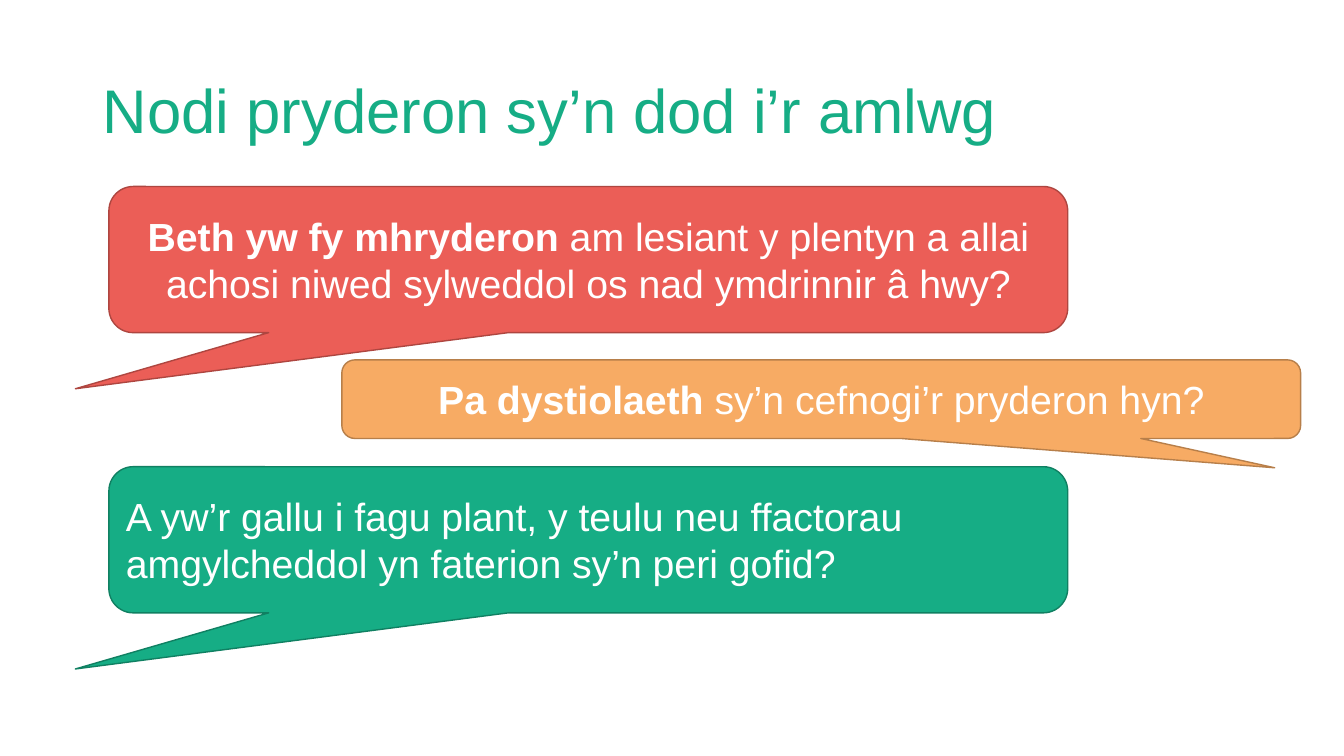
import pptx
import pptx.dml.color
import pptx.enum.shapes
import pptx.enum.text
import pptx.util

Inches = pptx.util.Inches
ALIGN = pptx.enum.text.PP_ALIGN
FONT = "Arial"
COLOURS = {
    "white": "FFFFFF",
    "red": "EB5E57",
    "red_line": "AE4640",
    "orange": "F7AB64",
    "orange_line": "B77F4A",
    "green": "16AD85",
    "green_line": "108062",
}
CALLOUT_WIDTH = 9.51
LEFT_TAIL = (-0.535, 0.884)
RIGHT_TAIL = (0.473, 0.873)
CALLOUTS = [
    ((1.08, 1.85, CALLOUT_WIDTH, 1.45), "red", LEFT_TAIL, ALIGN.CENTER,
     [("Beth yw fy mhryderon ", True),
      ("am lesiant y plentyn a allai achosi niwed sylweddol os nad ymdrinnir â hwy?", False)]),
    ((3.39, 3.57, CALLOUT_WIDTH, 0.78), "orange", RIGHT_TAIL, ALIGN.CENTER,
     [("Pa dystiolaeth ", True), ("sy’n cefnogi’r pryderon hyn?", False)]),
    ((1.08, 4.63, CALLOUT_WIDTH, 1.45), "green", LEFT_TAIL, ALIGN.LEFT,
     [("A yw’r gallu i fagu plant, y teulu neu ffactorau amgylcheddol yn faterion sy’n peri gofid?", False)]),
]


def colour(name):
    """Return the named colour."""
    return pptx.dml.color.RGBColor.from_string(COLOURS[name])


def add_run(paragraph, text, size, colour_name, bold=False):
    """Add one formatted run to a paragraph."""
    run = paragraph.add_run()
    run.text = text
    run.font.name = FONT
    run.font.size = pptx.util.Pt(size)
    run.font.bold = bold
    run.font.color.rgb = colour(colour_name)


def add_title(slide, box, text):
    """Place and fill the title placeholder."""
    title = slide.shapes.title
    title.left, title.top, title.width, title.height = map(Inches, box)
    frame = title.text_frame
    frame.word_wrap = True
    frame.vertical_anchor = pptx.enum.text.MSO_ANCHOR.MIDDLE
    paragraph = frame.paragraphs[0]
    paragraph.alignment = ALIGN.LEFT
    paragraph.line_spacing = 0.9
    add_run(paragraph, text, 44, "green")


def add_callout(slide, box, fill, tail, alignment, runs):
    """Add a rounded speech bubble whose tail is relative to its box."""
    kind = pptx.enum.shapes.MSO_SHAPE.ROUNDED_RECTANGULAR_CALLOUT
    shape = slide.shapes.add_shape(kind, *map(Inches, box))
    shape.adjustments[0], shape.adjustments[1] = tail
    shape.shadow.inherit = False
    shape.fill.solid()
    shape.fill.fore_color.rgb = colour(fill)
    shape.line.color.rgb = colour(fill + "_line")
    shape.line.width = pptx.util.Pt(1)
    frame = shape.text_frame
    frame.word_wrap = True
    frame.vertical_anchor = pptx.enum.text.MSO_ANCHOR.MIDDLE
    paragraph = frame.paragraphs[0]
    paragraph.alignment = alignment
    for text, bold in runs:
        add_run(paragraph, text, 28, "white", bold)


def main():
    """Build and save the slide."""
    presentation = pptx.Presentation()
    presentation.slide_width = Inches(13.33)
    presentation.slide_height = Inches(7.5)
    slide = presentation.slides.add_slide(presentation.slide_layouts[5])
    add_title(slide, (0.92, 0.4, 11.5, 1.45), "Nodi pryderon sy’n dod i’r amlwg")
    for callout in CALLOUTS:
        add_callout(slide, *callout)
    presentation.save("out.pptx")


if __name__ == "__main__":
    main()
